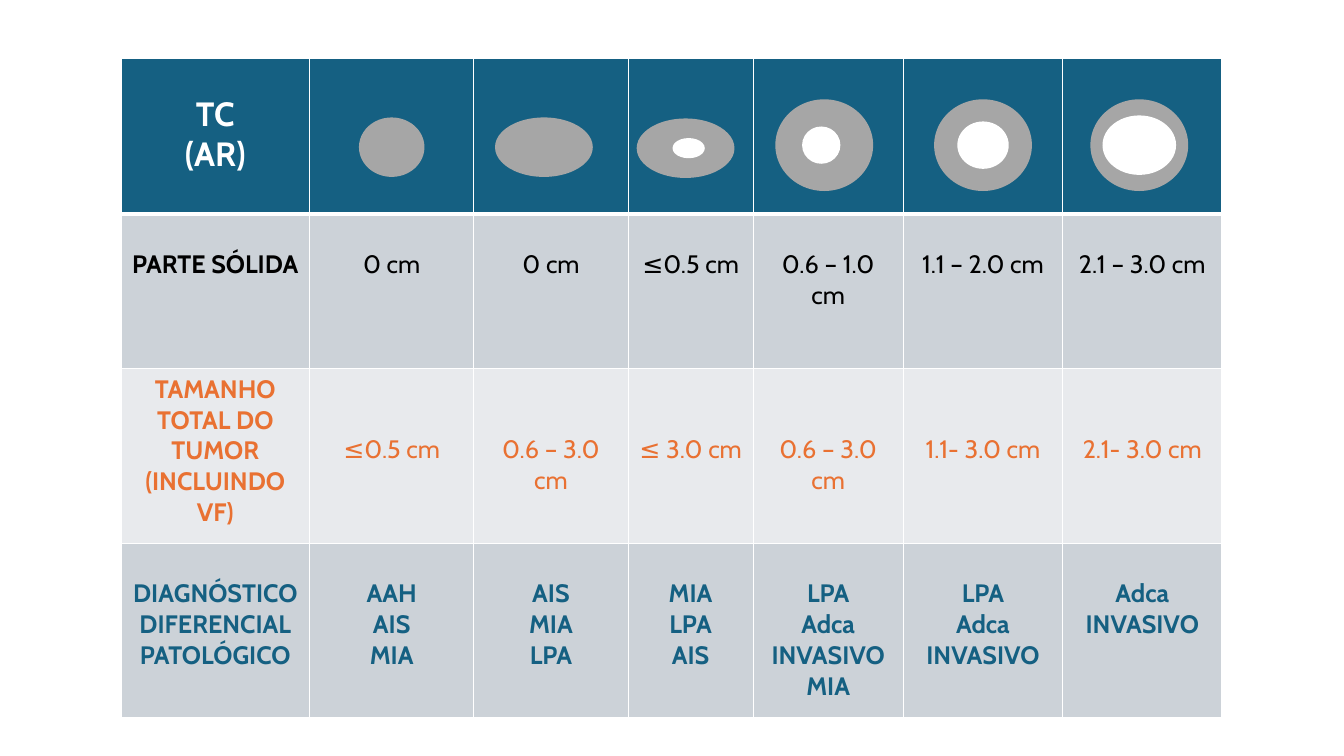
from lxml import etree
from pptx import Presentation
from pptx.dml.color import RGBColor
from pptx.enum.shapes import MSO_SHAPE
from pptx.enum.text import PP_ALIGN
from pptx.oxml.ns import qn
from pptx.util import Inches, Pt

OVAL = MSO_SHAPE.OVAL
CENTER = PP_ALIGN.CENTER

FONT = "Cabin"
COLORS = {
    "header": "156082",
    "band": "CCD2D8",
    "light": "E8EAED",
    "black": "000000",
    "orange": "E97132",
    "white": "FFFFFF",
    "ground_glass": "A6A6A6",
}

ROWS = [
    ["TC\n(AR)", "", "", "", "", "", ""],
    ["PARTE SÓLIDA", "0 cm", "0 cm", "≤0.5 cm", "0.6 – 1.0 cm", "1.1 – 2.0 cm", "2.1 – 3.0 cm"],
    ["TAMANHO TOTAL DO TUMOR (INCLUINDO VF)", "≤0.5 cm", "0.6 – 3.0 cm", "≤ 3.0 cm",
     "0.6 – 3.0 cm", "1.1- 3.0 cm", "2.1- 3.0 cm"],
    ["DIAGNÓSTICO DIFERENCIAL PATOLÓGICO", "AAH\nAIS\nMIA", "AIS\nMIA\nLPA", "MIA\nLPA\nAIS",
     "LPA\nAdca INVASIVO\nMIA", "LPA\nAdca INVASIVO", "Adca INVASIVO"],
]
# fill, text colour, size, bold values, skipped lines in label, skipped lines in values
ROW_STYLES = [
    ("header", "white", 24, True, 1, 1),
    ("band", "black", 18, False, 1, 1),
    ("light", "orange", 18, False, 0, 2),
    ("band", "header", 18, True, 1, 1),
]
COLUMN_WIDTHS = [1.87, 1.63, 1.53, 1.24, 1.49, 1.58, 1.58]
ROW_HEIGHTS = [1.54, 1.54, 1.73, 1.73]
LEFT, TOP = 1.2, 0.58
CELL_MARGIN, LINE_HEIGHT = 0.05, 0.3

# column, offset from column centre, centre height, size, solid size, solid offset
NODULES = [
    (1, 0, 1.46, (0.65, 0.59), None, 0),
    (2, -0.07, 1.46, (0.97, 0.59), None, 0),
    (3, -0.05, 1.47, (0.97, 0.59), (0.32, 0.2), 0.03),
    (4, -0.04, 1.44, (0.97, 0.91), (0.38, 0.37), -0.03),
    (5, 0, 1.44, (0.97, 0.91), (0.51, 0.47), 0),
    (6, -0.03, 1.44, (0.97, 0.91), (0.73, 0.59), 0),
]


def rgb(name):
    return RGBColor.from_string(COLORS[name])


def add_borders(cell, top, bottom):
    properties = cell._tc.get_or_add_tcPr()
    for side, points in (("L", 1), ("R", 1), ("T", top), ("B", bottom)):
        line = etree.SubElement(properties, qn(f"a:ln{side}"), w=str(Pt(points)))
        fill = etree.SubElement(line, qn("a:solidFill"))
        etree.SubElement(fill, qn("a:srgbClr"), val=COLORS["white"])


def fill_cell(cell, text, row, column):
    fill, color, size, bold_values, label_skip, value_skip = ROW_STYLES[row]
    skip = value_skip if column else label_skip
    add_borders(cell, 3 if row == 1 else 1, 3 if row == 0 else 1)
    cell.fill.solid()
    cell.fill.fore_color.rgb = rgb(fill)
    cell.margin_top = Inches(CELL_MARGIN + skip * LINE_HEIGHT)
    cell.text_frame.text = text
    for para in cell.text_frame.paragraphs:
        para.alignment = CENTER
        for span in para.runs:
            span.font.name = FONT
            span.font.size = Pt(size)
            span.font.bold = bold_values or column == 0
            span.font.color.rgb = rgb(color)


def add_oval(page, center_x, center_y, size, color):
    width, height = size
    oval = page.shapes.add_shape(OVAL, Inches(center_x - width / 2), Inches(center_y - height / 2),
                                 Inches(width), Inches(height))
    oval.shadow.inherit = False
    oval.fill.solid()
    oval.fill.fore_color.rgb = rgb(color)
    oval.line.fill.background()


def main():
    deck = Presentation()
    deck.slide_width, deck.slide_height = Inches(13.33), Inches(7.5)
    page = deck.slides.add_slide(deck.slide_layouts[6])

    table = page.shapes.add_table(len(ROWS), len(COLUMN_WIDTHS), Inches(LEFT), Inches(TOP),
                                  Inches(sum(COLUMN_WIDTHS)), Inches(sum(ROW_HEIGHTS))).table
    for column, width in enumerate(COLUMN_WIDTHS):
        table.columns[column].width = Inches(width)
    for row, texts in enumerate(ROWS):
        table.rows[row].height = Inches(ROW_HEIGHTS[row])
        for column, text in enumerate(texts):
            fill_cell(table.cell(row, column), text, row, column)

    for column, offset, center_y, size, solid_size, solid_offset in NODULES:
        center_x = LEFT + sum(COLUMN_WIDTHS[:column]) + COLUMN_WIDTHS[column] / 2 + offset
        add_oval(page, center_x, center_y, size, "ground_glass")
        if solid_size:
            add_oval(page, center_x + solid_offset, center_y, solid_size, "white")

    deck.save("out.pptx")


if __name__ == "__main__":
    main()
